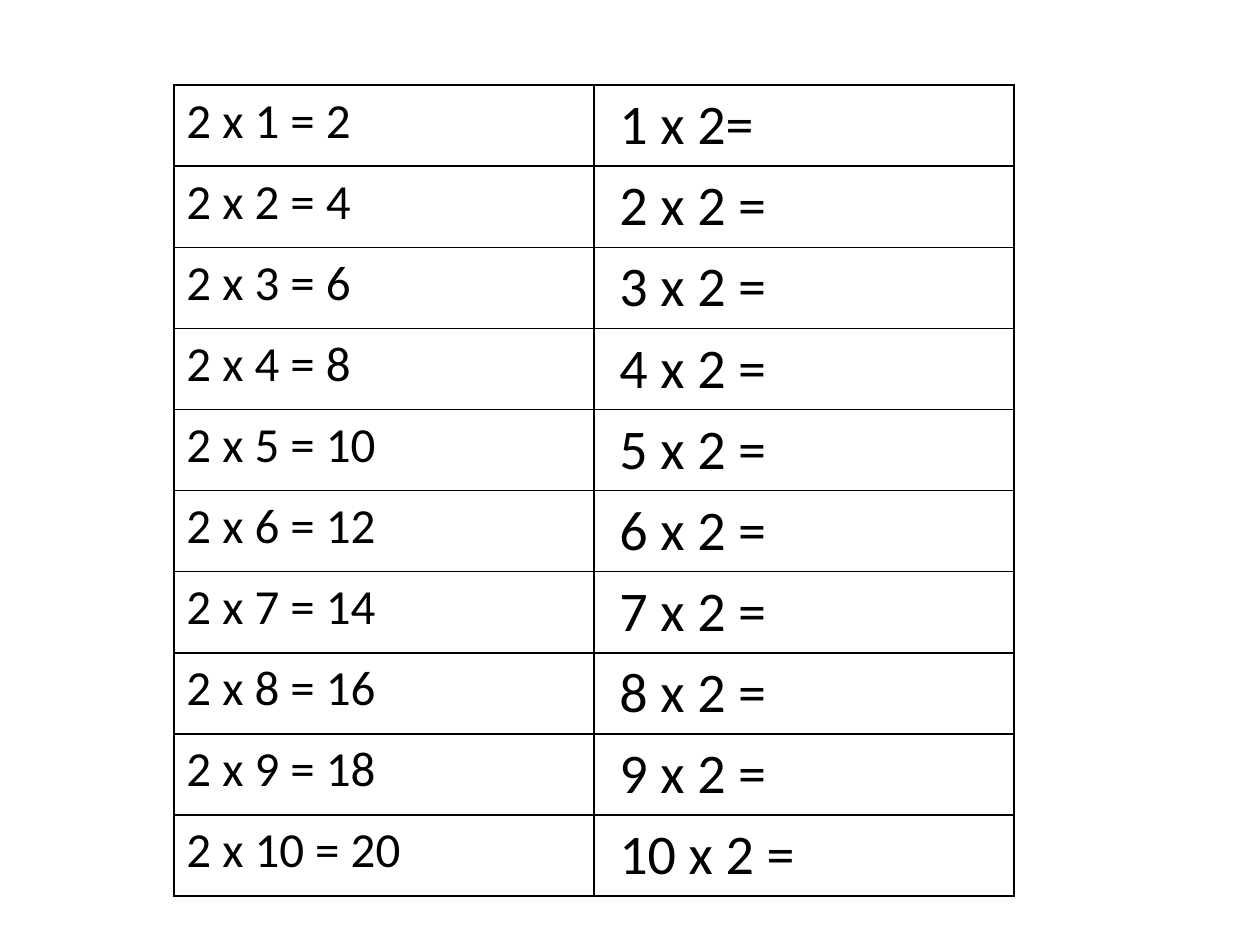
from dataclasses import dataclass

from lxml.etree import SubElement
from pptx import Presentation
from pptx.dml.color import RGBColor as Rgb
from pptx.oxml.ns import qn
from pptx.util import Inches, Pt


@dataclass(frozen=True)
class Theme:
    font: str = "Calibri"
    ink: str = "000000"
    solved_size: int = 28
    exercise_size: int = 32
    border_width: int = 1


class Worksheet:
    def __init__(self, deck, theme):
        self.theme = theme
        self.width, self.height = deck.slide_width, deck.slide_height
        self.slide = deck.slides.add_slide(deck.slide_layouts[6])

    def table(self, rows, sizes, left, top, width, height):
        frame = self.slide.shapes.add_table(
            len(rows), len(sizes),
            int(left * self.width), int(top * self.height),
            int(width * self.width), int(height * self.height))
        grid = frame.table
        grid.first_row = grid.horz_banding = False
        for row, texts in enumerate(rows):
            for column, (text, size) in enumerate(zip(texts, sizes)):
                self.cell(grid.cell(row, column), text, size)

    def cell(self, cell, text, size):
        cell.text = text
        font = cell.text_frame.paragraphs[0].font
        font.name, font.size = self.theme.font, Pt(size)
        font.color.rgb = Rgb.from_string(self.theme.ink)
        self.borders(cell)
        cell.fill.background()

    def borders(self, cell):
        properties = cell._tc.get_or_add_tcPr()
        for side in ("a:lnL", "a:lnR", "a:lnT", "a:lnB"):
            line = SubElement(properties, qn(side), w=str(Pt(self.theme.border_width)))
            fill = SubElement(line, qn("a:solidFill"))
            SubElement(fill, qn("a:srgbClr"), val=self.theme.ink)


def main():
    deck = Presentation()
    deck.slide_width, deck.slide_height = Inches(10), Inches(7.5)
    theme = Theme()
    facts = []
    for factor in range(1, 11):
        equals = "=" if factor == 1 else " ="
        facts.append((f"2 х {factor} = {2 * factor}", f" {factor} х 2{equals}"))
    Worksheet(deck, theme).table(
        facts, (theme.solved_size, theme.exercise_size),
        left=0.138, top=0.09, width=0.667, height=0.84)
    deck.save("out.pptx")


if __name__ == "__main__":
    main()
